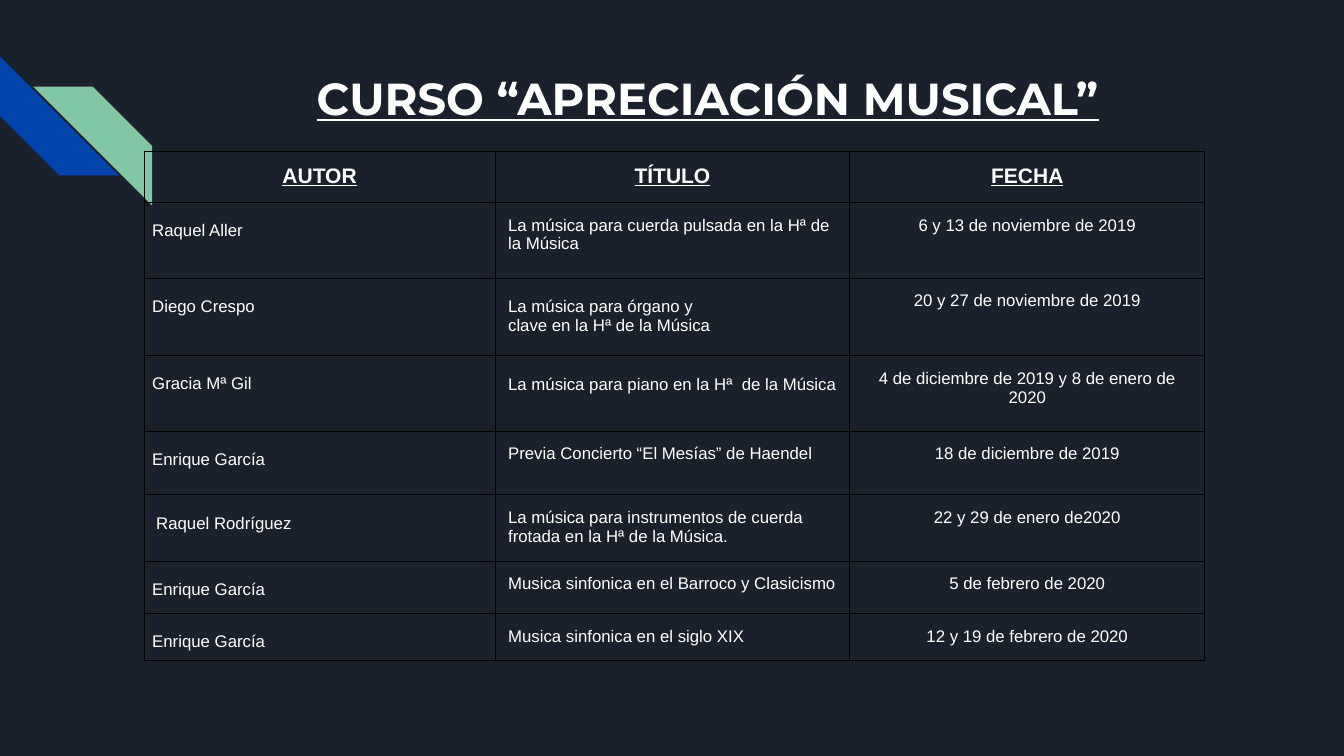
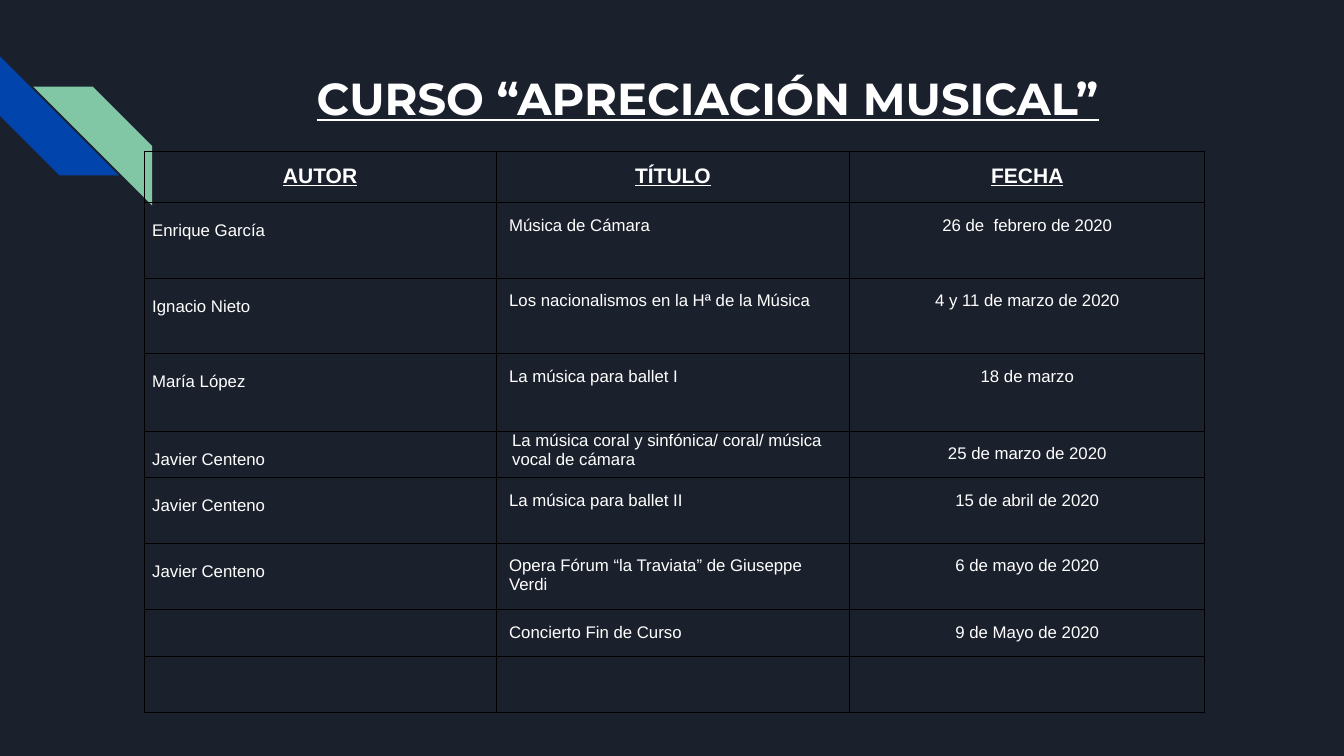
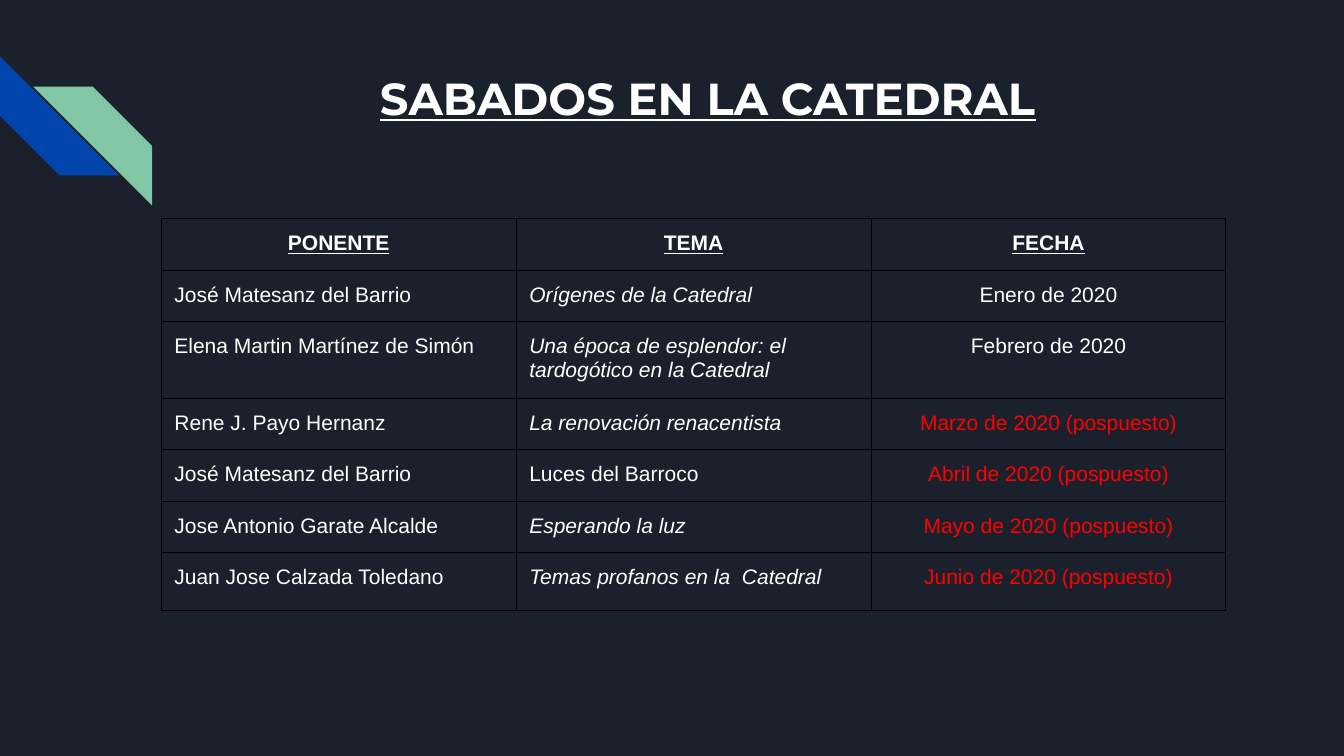
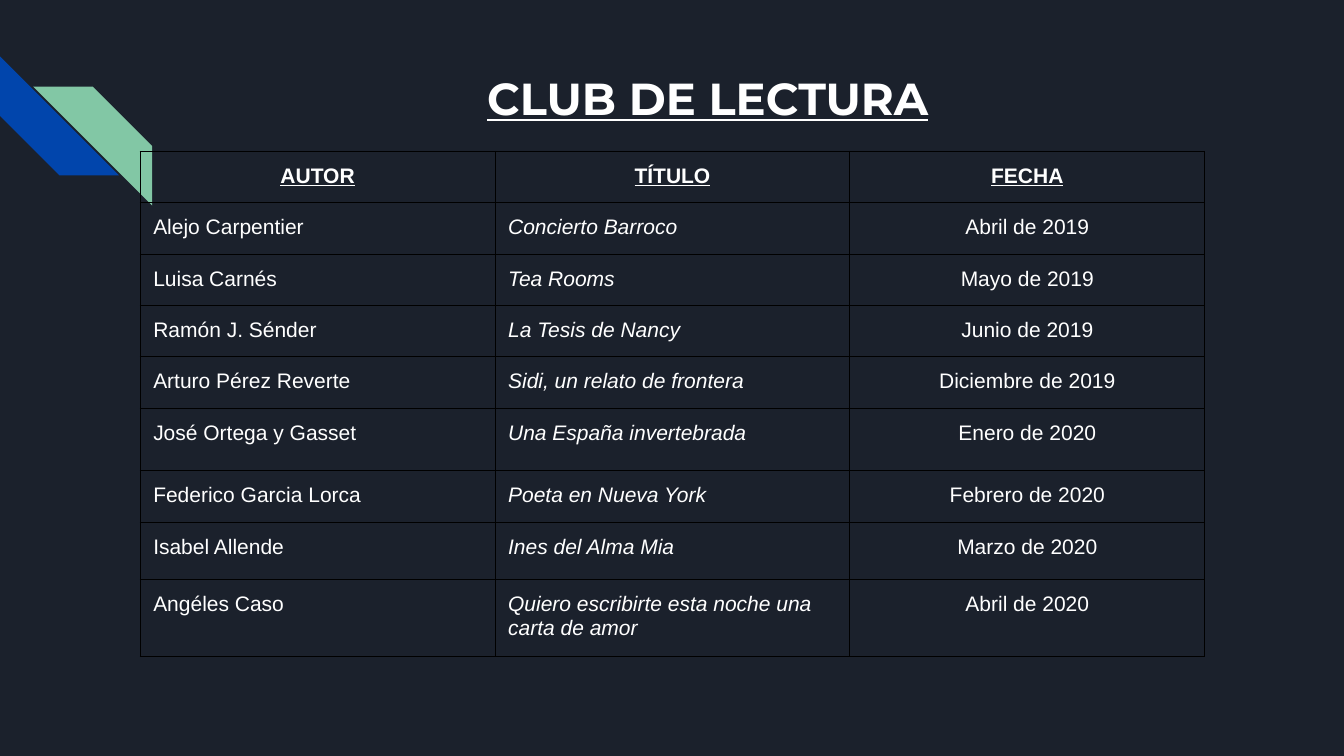
from lxml import etree
from pptx import Presentation
from pptx.dml.color import RGBColor as RGB
from pptx.enum.shapes import MSO_SHAPE as Shape
from pptx.enum.text import MSO_ANCHOR as Anchor, PP_ALIGN as Align
from pptx.oxml.ns import qn
from pptx.util import Inches, Pt

# Shared look
NIGHT = RGB(0x1B, 0x21, 0x2C)
BLUE = RGB(0x01, 0x45, 0xAC)
GREEN = RGB(0x82, 0xC7, 0xA5)
WHITE = RGB(0xFF, 0xFF, 0xFF)
RED = RGB(0xFF, 0x00, 0x00)
BLACK = RGB(0x00, 0x00, 0x00)
PAD = 0.13

# Cell formats: one per column
HEAD = dict(size=15, bold=True, line=True, align=Align.CENTER)
NAME = dict(size=12, space=2, pads=(0.08, 0, 0, 0))
TOPIC = dict(size=12)
DATE = dict(size=12, align=Align.CENTER)
LOW = dict(pads=(PAD, 0.19, 0, 0))
COURSE = (NAME, TOPIC, DATE)
TALKS = (dict(size=15), dict(size=15, slant=True),
         dict(size=15, align=Align.CENTER))

# Table content: row height, then the cells
COURSE_HEAD = (0.5, "AUTOR", "TÍTULO", "FECHA")
AUTUMN = [
    COURSE_HEAD,
    (0.75, "Raquel Aller",
     "La música para cuerda pulsada en la Hª de la Música",
     "6 y 13 de noviembre de 2019"),
    (0.77, "Diego Crespo",
     "La música para órgano y\nclave en la Hª de la Música",
     "20 y 27 de noviembre de 2019"),
    (0.75, "Gracia Mª Gil", "La música para piano en la Hª  de la Música",
     "4 de diciembre de 2019 y 8 de enero de 2020"),
    (0.63, "Enrique García", "Previa Concierto “El Mesías” de Haendel",
     "18 de diciembre de 2019"),
    (0.64, "Raquel Rodríguez",
     "La música para instrumentos de cuerda frotada en la Hª de la Música.",
     "22 y 29 de enero de2020"),
    (0.52, "Enrique García", "Musica sinfonica en el Barroco y Clasicismo",
     "5 de febrero de 2020"),
    (0.46, "Enrique García", "Musica sinfonica en el siglo XIX",
     "12 y 19 de febrero de 2020"),
]
SPRING = [
    COURSE_HEAD,
    (0.75, "Enrique García", "Música de Cámara", "26 de  febrero de 2020"),
    (0.75, "Ignacio Nieto", "Los nacionalismos en la Hª de la Música",
     "4 y 11 de marzo de 2020"),
    (0.77, "María López", "La música para ballet I", "18 de marzo"),
    (0.45, "Javier Centeno",
     "La música coral y sinfónica/ coral/ música vocal de cámara",
     "25 de marzo de 2020"),
    (0.65, "Javier Centeno", "La música para ballet II",
     "15 de abril de 2020"),
    (0.63, "Javier Centeno", "Opera Fórum “la Traviata” de Giuseppe Verdi",
     "6 de mayo de 2020"),
    (0.46, "", "Concierto Fin de Curso", "9 de Mayo de 2020"),
    (0.46, "", "", ""),
]
CHURCH = [
    (0.5, "PONENTE", "TEMA", "FECHA"),
    (0.5, "José Matesanz del Barrio", "Orígenes de la Catedral",
     "Enero de 2020"),
    (0.73, "Elena Martin Martínez de Simón",
     "Una época de esplendor: el tardogótico en la Catedral",
     "Febrero de 2020"),
    (0.5, "Rene J. Payo Hernanz", "La renovación renacentista",
     "Marzo de 2020 (pospuesto)"),
    (0.51, "José Matesanz del Barrio", "Luces del Barroco",
     "Abril de 2020 (pospuesto)"),
    (0.5, "Jose Antonio Garate Alcalde", "Esperando la luz",
     "Mayo de 2020 (pospuesto)"),
    (0.57, "Juan Jose Calzada Toledano", "Temas profanos en la  Catedral",
     "Junio de 2020 (pospuesto)"),
]
BOOKS = [
    COURSE_HEAD,
    (0.5, "Alejo Carpentier", "Concierto Barroco", "Abril de 2019"),
    (0.5, "Luisa Carnés", "Tea Rooms", "Mayo de 2019"),
    (0.5, "Ramón J. Sénder", "La Tesis de Nancy", "Junio de 2019"),
    (0.5, "Arturo Pérez Reverte", "Sidi, un relato de frontera",
     "Diciembre de 2019"),
    (0.62, "José Ortega y Gasset", "Una España invertebrada",
     "Enero de 2020"),
    (0.5, "Federico Garcia Lorca", "Poeta en Nueva York",
     "Febrero de 2020"),
    (0.57, "Isabel Allende", "Ines del Alma Mia", "Marzo de 2020"),
    (0.74, "Angéles Caso", "Quiero escribirte esta noche una carta de amor",
     "Abril de 2020"),
]


def write(frame, text, size=15, font="Arial", color=WHITE, bold=False,
          slant=False, line=False, align=Align.LEFT, space=1):
    """Fill a text frame, one paragraph per line of text."""
    for i, part in enumerate(text.split("\n")):
        para = frame.add_paragraph() if i else frame.paragraphs[0]
        para.alignment, para.line_spacing = align, space
        run = para.add_run()
        run.text = part
        face = run.font
        face.name, face.size, face.color.rgb = font, Pt(size), color
        face.bold, face.italic, face.underline = bold, slant, line


def inset(box, pads):
    """Set left, top, right and bottom margins of a cell or frame."""
    (box.margin_left, box.margin_top,
     box.margin_right, box.margin_bottom) = map(Inches, pads)


def stripe(slide, x, y, color, turn=0, flip=False):
    band = slide.shapes.add_shape(Shape.DIAGONAL_STRIPE, Inches(x), Inches(y),
                                  Inches(1.18), Inches(1.18))
    band.shadow.inherit = False
    band.fill.solid()
    band.fill.fore_color.rgb = color
    band.line.fill.background()
    band.rotation = turn
    if flip:
        band._element.spPr.get_or_add_xfrm().set("flipH", "1")


def border(cell):
    """Draw a thin black line on all four sides."""
    props = cell._tc.get_or_add_tcPr()
    for i, side in enumerate(("a:lnL", "a:lnR", "a:lnT", "a:lnB")):
        edge = etree.Element(qn(side), w=str(Pt(0.75)))
        fill = etree.SubElement(edge, qn("a:solidFill"))
        etree.SubElement(fill, qn("a:srgbClr"), val=str(BLACK))
        props.insert(i, edge)


def grid(slide, x, y, cols, rows, looks, odd):
    """Add a table; odd maps (row, column) to changes of format."""
    high = sum(row[0] for row in rows)
    table = slide.shapes.add_table(len(rows), len(cols), Inches(x), Inches(y),
                                   Inches(sum(cols)), Inches(high)).table
    table.first_row = table.horz_banding = False
    for col, wide in zip(table.columns, cols):
        col.width = Inches(wide)
    for r, (tall, *texts) in enumerate(rows):
        table.rows[r].height = Inches(tall)
        for c, text in enumerate(texts):
            cell = table.cell(r, c)
            look = {**(looks[c] if r else HEAD), **odd.get((r, c), {})}
            inset(cell, look.pop("pads", (PAD,) * 4))
            cell.fill.background()
            border(cell)
            if text:
                write(cell.text_frame, text, **look)


def page(deck, title, x, y, cols, rows, looks, odd):
    slide = deck.slides.add_slide(deck.slide_layouts[6])
    # Corner bands
    stripe(slide, 0, 0.56, BLUE, turn=270)
    stripe(slide, 0.33, 0.86, GREEN, flip=True)
    # Title
    frame = slide.shapes.add_textbox(Inches(1.89), Inches(0.57),
                                     Inches(10.26), Inches(0.75)).text_frame
    frame.word_wrap = True
    frame.vertical_anchor = Anchor.TOP
    inset(frame, (PAD,) * 4)
    write(frame, title, size=32, font="Montserrat", bold=True, line=True,
          align=Align.CENTER)
    # Table
    grid(slide, x, y, cols, rows, looks, odd)


def main():
    deck = Presentation()
    deck.slide_width, deck.slide_height = Inches(13.33), Inches(7.5)
    back = deck.slide_master.background.fill
    back.solid()
    back.fore_color.rgb = NIGHT

    music = "CURSO “APRECIACIÓN MUSICAL”"
    even = (3.52,) * 3
    page(deck, music, 1.43, 1.5, (3.48, 3.52, 3.52), AUTUMN, COURSE,
         {(2, 1): LOW, (3, 1): LOW, (5, 0): dict(pads=(0.12, 0, 0, 0))})
    page(deck, music, 1.43, 1.5, (3.49, 3.51, 3.52), SPRING, COURSE,
         {(4, 1): dict(pads=(0.16, 0, 0, 0))})
    late = {(r, 2): dict(color=RED) for r in range(3, 7)}
    page(deck, "SABADOS EN LA CATEDRAL", 1.6, 2.17, even, CHURCH, TALKS,
         {**late, (4, 1): dict(slant=False)})
    page(deck, "CLUB DE LECTURA", 1.39, 1.5, even, BOOKS, TALKS, {})
    deck.save("out.pptx")


if __name__ == "__main__":
    main()
